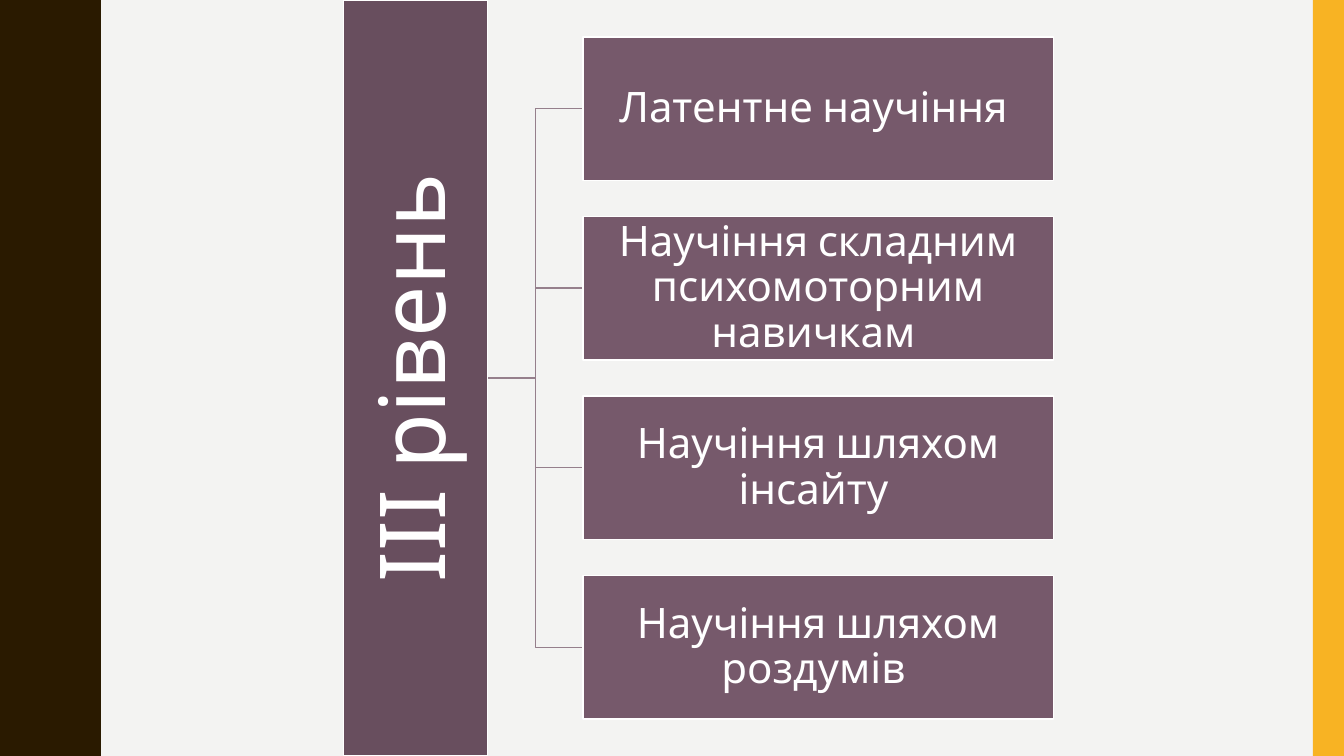
from lxml import etree
from pptx import Presentation
from pptx import util as u
from pptx.dml.color import RGBColor
from pptx.enum import shapes, text
from pptx.oxml.ns import qn

WIDTH, HEIGHT = 13.33, 7.5
FONT = "Cabin"
COLORS = {
    "paper": "F3F3F2",
    "wave": "2A1A00",
    "stripe": "F8B323",
    "level": "684E5E",
    "kind": "76596B",
    "link": "957F8C",
    "white": "FFFFFF",
}
LEVEL = "ІІІ рівень"
KINDS = [
    "Латентне научіння ",
    "Научіння складним психомоторним навичкам ",
    "Научіння шляхом інсайту ",
    "Научіння шляхом роздумів ",
]

# Rising half of one wave: x and y in inches from the trough
WAVE_PERIOD = 1.5
HALF_WAVE = [
    (0, 0), (0, 0.07), (0.01, 0.14), (0.02, 0.2), (0.03, 0.25),
    (0.05, 0.29), (0.07, 0.33), (0.09, 0.38), (0.11, 0.42), (0.13, 0.46),
    (0.15, 0.5), (0.17, 0.55), (0.18, 0.61), (0.19, 0.68), (0.19, 0.75),
]


def color(name):
    return RGBColor.from_string(COLORS[name])


def paint(shape, fill, line=None):
    shape.shadow.inherit = False
    shape.fill.solid()
    shape.fill.fore_color.rgb = color(fill)
    if line:
        shape.line.color.rgb = color(line)
        shape.line.width = u.Pt(1)
    else:
        shape.line.fill.background()


def add_box(slide, left, top, width, height, fill, line=None):
    box = slide.shapes.add_shape(
        shapes.MSO_SHAPE.RECTANGLE,
        *(u.Inches(length) for length in (left, top, width, height)))
    paint(box, fill, line)
    return box


def write(box, words, size, inset):
    frame = box.text_frame
    frame.word_wrap = True
    frame.vertical_anchor = text.MSO_ANCHOR.MIDDLE
    frame.margin_left = frame.margin_right = u.Inches(inset)
    frame.margin_top = frame.margin_bottom = u.Inches(inset)
    frame.text = words
    para = frame.paragraphs[0]
    para.alignment = text.PP_ALIGN.CENTER
    para.line_spacing = 0.9
    span = para.runs[0]
    span.font.name = FONT
    span.font.size = u.Pt(size)
    span.font.color.rgb = color("white")


def add_wave(slide, trough, height):
    """Dark left band with a wavy right edge."""
    falling = [(x, WAVE_PERIOD - y) for x, y in reversed(HALF_WAVE)]
    period = HALF_WAVE + falling[1:]
    edge = [(trough + x, turn * WAVE_PERIOD + y)
            for turn in range(round(height / WAVE_PERIOD)) for x, y in period]
    builder = slide.shapes.build_freeform(0, 0, scale=u.Inches(1))
    builder.add_line_segments(edge + [(0, height)], close=True)
    paint(builder.convert_to_shape(), "wave")


def add_link(slide, start, end):
    link = slide.shapes.add_connector(
        shapes.MSO_CONNECTOR.ELBOW,
        *(u.Inches(length) for length in start + end))
    link.line.color.rgb = color("link")
    link.line.width = u.Pt(1)
    etree.SubElement(link._element.spPr, qn("a:effectLst"))


def add_hierarchy(slide, left, top, width, height):
    """Upright level bar on the left, linked to a column of kinds."""
    bar = 0.19 * height
    pitch = height * 0.2375
    kind_width = 0.663 * width
    kind_left = left + width - kind_width
    middle = top + height / 2
    first = middle - pitch * (len(KINDS) - 1) / 2
    centers = [first + row * pitch for row in range(len(KINDS))]

    # Links
    for center in reversed(centers):
        add_link(slide, (left + bar, middle), (kind_left, center))

    # Level bar, turned about its centre
    level = add_box(slide, left + (bar - height) / 2, middle - bar / 2,
                    height, bar, "level", "white")
    level.rotation = 270
    write(level, LEVEL, 65, 0.05)

    # Kinds of learning
    for center, words in zip(centers, KINDS):
        kind = add_box(slide, kind_left, center - bar / 2,
                       kind_width, bar, "kind", "white")
        write(kind, words, 30, 0.02)


def main():
    deck = Presentation()
    deck.slide_width, deck.slide_height = u.Inches(WIDTH), u.Inches(HEIGHT)
    page = deck.slides.add_slide(deck.slide_layouts[6])
    page.background.fill.solid()
    page.background.fill.fore_color.rgb = color("paper")

    add_wave(page, 0.78, HEIGHT)
    add_box(page, WIDTH - 0.31, 0, 0.31, HEIGHT, "stripe")
    add_hierarchy(page, 3.41, 0, 7.04, HEIGHT)
    deck.save("out.pptx")


if __name__ == "__main__":
    main()
